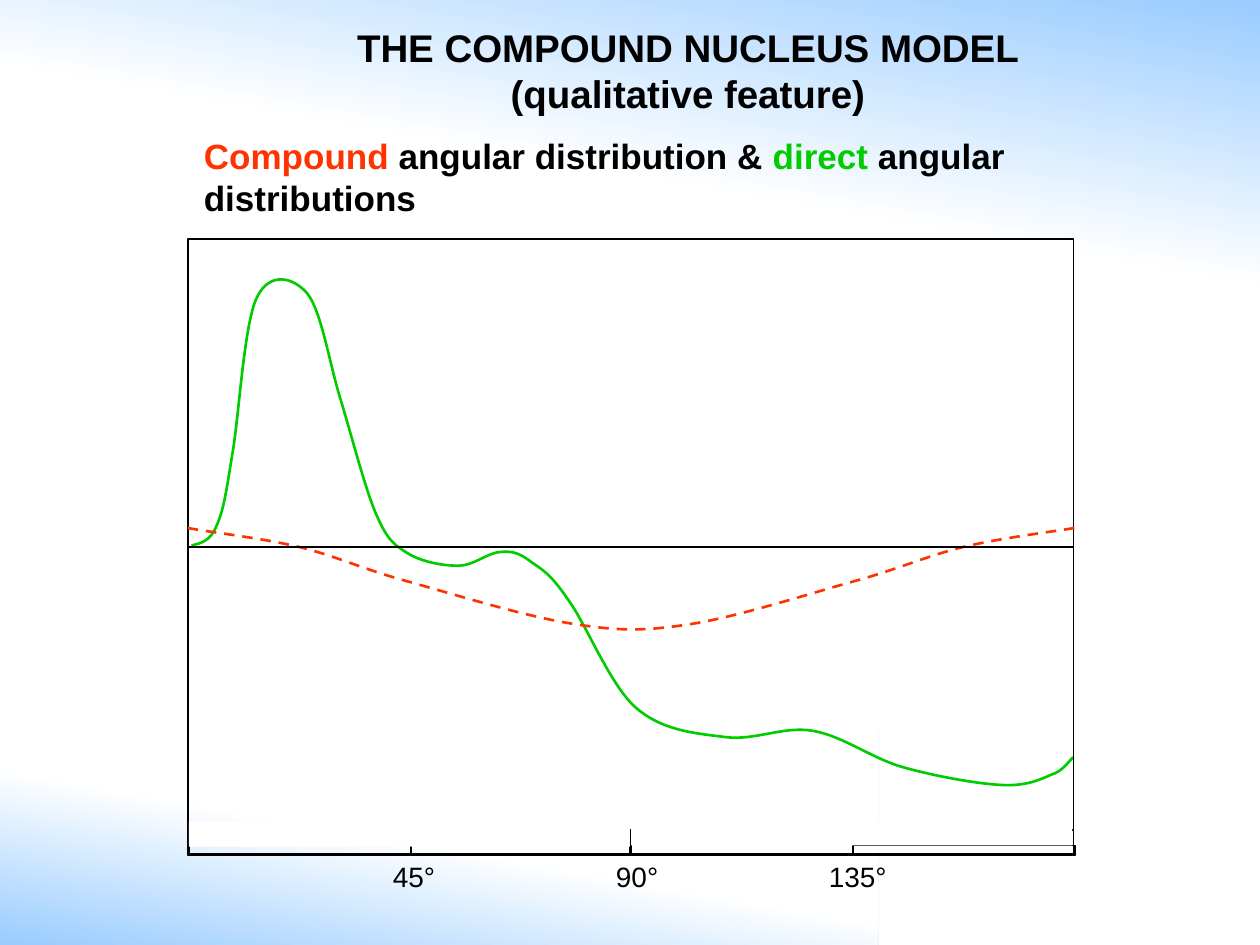
import pptx
import pptx.dml.color
import pptx.enum.dml
import pptx.enum.shapes
import pptx.enum.text
import pptx.oxml
import pptx.oxml.ns
import pptx.util

Inches = pptx.util.Inches
Pt = pptx.util.Pt
Align = pptx.enum.text.PP_ALIGN
Anchor = pptx.enum.text.MSO_ANCHOR

COLORS = {
    "sky": "99CCFF",
    "white": "FFFFFF",
    "black": "000000",
    "compound": "FF3300",
    "direct": "00CC00",
}

PLOT_LEFT, PLOT_WIDTH = 1.49, 7.03
PLOT_TOP, HALF_HEIGHT = 1.9, 2.44
HALF_WIDTH = 3.52

DIRECT_CURVE = [
    (1.52, 4.33),
    (1.59, 4.31), (1.67, 4.3), (1.72, 4.17),
    (1.78, 4.04), (1.8, 3.87), (1.85, 3.57),
    (1.9, 3.26), (1.94, 2.56), (2.04, 2.36),
    (2.14, 2.15), (2.33, 2.2), (2.44, 2.33),
    (2.55, 2.47), (2.61, 2.86), (2.7, 3.16),
    (2.79, 3.45), (2.9, 3.89), (2.99, 4.09),
    (3.08, 4.3), (3.14, 4.33), (3.25, 4.4),
    (3.36, 4.46), (3.51, 4.49), (3.64, 4.49),
    (3.76, 4.49), (3.88, 4.38), (3.98, 4.38),
    (4.08, 4.37), (4.14, 4.4), (4.23, 4.47),
    (4.32, 4.53), (4.38, 4.57), (4.51, 4.76),
    (4.65, 4.95), (4.84, 5.43), (5.04, 5.61),
    (5.25, 5.8), (5.52, 5.82), (5.76, 5.85),
    (5.99, 5.88), (6.22, 5.76), (6.45, 5.8),
    (6.69, 5.84), (6.92, 6.02), (7.17, 6.09),
    (7.42, 6.16), (7.75, 6.22), (7.95, 6.23),
    (8.14, 6.24), (8.25, 6.19), (8.34, 6.15),
    (8.44, 6.12), (8.48, 6.04), (8.52, 6.01),
]
COMPOUND_CURVE = [
    (1.49, 4.19),
    (1.64, 4.22), (2.08, 4.27), (2.37, 4.34),
    (2.66, 4.41), (2.86, 4.51), (3.22, 4.61),
    (3.58, 4.71), (4.16, 4.89), (4.54, 4.95),
    (4.92, 5.01), (5.12, 5.01), (5.5, 4.95),
    (5.87, 4.89), (6.43, 4.71), (6.79, 4.61),
    (7.15, 4.51), (7.36, 4.41), (7.65, 4.34),
    (7.94, 4.27), (8.35, 4.22), (8.53, 4.19),
]


def rgb(name):
    return pptx.dml.color.RGBColor.from_string(COLORS[name])


def add_rectangle(slide, left, top, width, height, fill=None, line=None):
    shape = slide.shapes.add_shape(
        pptx.enum.shapes.MSO_SHAPE.RECTANGLE,
        Inches(left), Inches(top), Inches(width), Inches(height))
    shape.shadow.inherit = False
    if fill:
        shape.fill.solid()
        shape.fill.fore_color.rgb = rgb(fill)
    else:
        shape.fill.background()
    if line:
        shape.line.color.rgb = rgb(line)
        shape.line.width = Pt(1)
    else:
        shape.line.fill.background()
    return shape


def add_gradient(slide, left, top, width, height, fade, angle):
    shape = add_rectangle(slide, left, top, width, height)
    shape.fill.gradient()
    shape.fill.gradient_angle = angle
    stops = shape.fill.gradient_stops
    for stop, color, position in zip(stops, ("sky", "white"), (0, fade)):
        stop.color.rgb = rgb(color)
        stop.position = position


def add_curve(slide, points, color, dash=None):
    start, *others = [(Inches(x), Inches(y)) for x, y in points]
    builder = slide.shapes.build_freeform(*start)
    builder.add_line_segments(others, close=False)
    shape = builder.convert_to_shape()
    shape.shadow.inherit = False
    shape.fill.background()
    shape.line.color.rgb = rgb(color)
    shape.line.width = Pt(1.5)
    if dash:
        shape.line.dash_style = dash
    qn = pptx.oxml.ns.qn
    outline = next(shape.element.iter(qn("a:path")))
    segments = outline.findall(qn("a:lnTo"))
    for first in range(0, len(segments), 3):
        bezier = pptx.oxml.parse_xml(
            f"<a:cubicBezTo {pptx.oxml.ns.nsdecls('a')}/>")
        for segment in segments[first:first + 3]:
            bezier.append(segment[0])
            outline.remove(segment)
        outline.append(bezier)


def add_text(slide, lines, left, top, width, height, size, bold=False,
             align=Align.LEFT, anchor=Anchor.TOP, inset=(0.1, 0.05), tabs=()):
    box = slide.shapes.add_textbox(
        Inches(left), Inches(top), Inches(width), Inches(height))
    frame = box.text_frame
    frame.word_wrap = True
    frame.vertical_anchor = anchor
    frame.margin_left = frame.margin_right = Inches(inset[0])
    frame.margin_top = frame.margin_bottom = Inches(inset[1])
    for index, line in enumerate(lines):
        paragraph = frame.add_paragraph() if index else frame.paragraphs[0]
        paragraph.alignment = align
        if tabs:
            stops = "".join(
                f'<a:tab pos="{Inches(stop)}" algn="l"/>' for stop in tabs)
            paragraph._p.get_or_add_pPr().append(pptx.oxml.parse_xml(
                f"<a:tabLst {pptx.oxml.ns.nsdecls('a')}>{stops}</a:tabLst>"))
        for text, color in line:
            run = paragraph.add_run()
            run.text = text
            run.font.name = "Arial"
            run.font.size = Pt(size)
            run.font.bold = bold
            run.font.color.rgb = rgb(color)


def add_plot(slide):
    middle = PLOT_TOP + HALF_HEIGHT
    add_rectangle(slide, PLOT_LEFT, PLOT_TOP, PLOT_WIDTH, HALF_HEIGHT,
                  fill="white", line="black")
    add_curve(slide, DIRECT_CURVE, "direct")
    add_rectangle(slide, 5, 6.59, HALF_WIDTH, 0.2, line="black")
    add_curve(slide, COMPOUND_CURVE, "compound",
              pptx.enum.dml.MSO_LINE.DASH)
    add_rectangle(slide, PLOT_LEFT, middle, PLOT_WIDTH, HALF_HEIGHT,
                  line="black")
    add_rectangle(slide, PLOT_LEFT, 6.59, HALF_WIDTH, 0.2, line="black")
    for left in (1.5, 6.77):
        add_rectangle(slide, left, 6.71, HALF_WIDTH / 2, 0.08, line="black")
    for left, top in ((5.01, 6.51), (1.5, 6.52)):
        add_rectangle(slide, left, top, 3.5, 0.2, fill="white")
    add_text(slide, [[("45°\t90°\t135°", "black")]],
             3.02, 6.77, 4.15, 0.37, 16, tabs=(1.77, 3.46))


def main():
    presentation = pptx.Presentation()
    presentation.slide_width = Inches(10)
    presentation.slide_height = Inches(7.5)
    slide = presentation.slides.add_slide(presentation.slide_layouts[6])
    slide.background.fill.solid()
    slide.background.fill.fore_color.rgb = rgb("white")
    add_gradient(slide, 0, 5.8, 6.97, 1.7, fade=0.48, angle=80)
    add_gradient(slide, 0, 0, 10, 2.33, fade=0.56, angle=260)
    add_text(slide, [[("THE COMPOUND NUCLEUS MODEL", "black")],
                     [("(qualitative feature)", "black")]],
             2.4, 0.06, 6.12, 0.99, 22, bold=True, align=Align.CENTER,
             anchor=Anchor.MIDDLE, inset=(0, 0))
    add_text(slide, [[("Compound", "compound"),
                      (" angular distribution & ", "black"),
                      ("direct", "direct"),
                      (" angular distributions", "black")]],
             1.52, 1.02, 7.5, 0.77, 20, bold=True)
    add_plot(slide)
    presentation.save("out.pptx")


if __name__ == "__main__":
    main()
